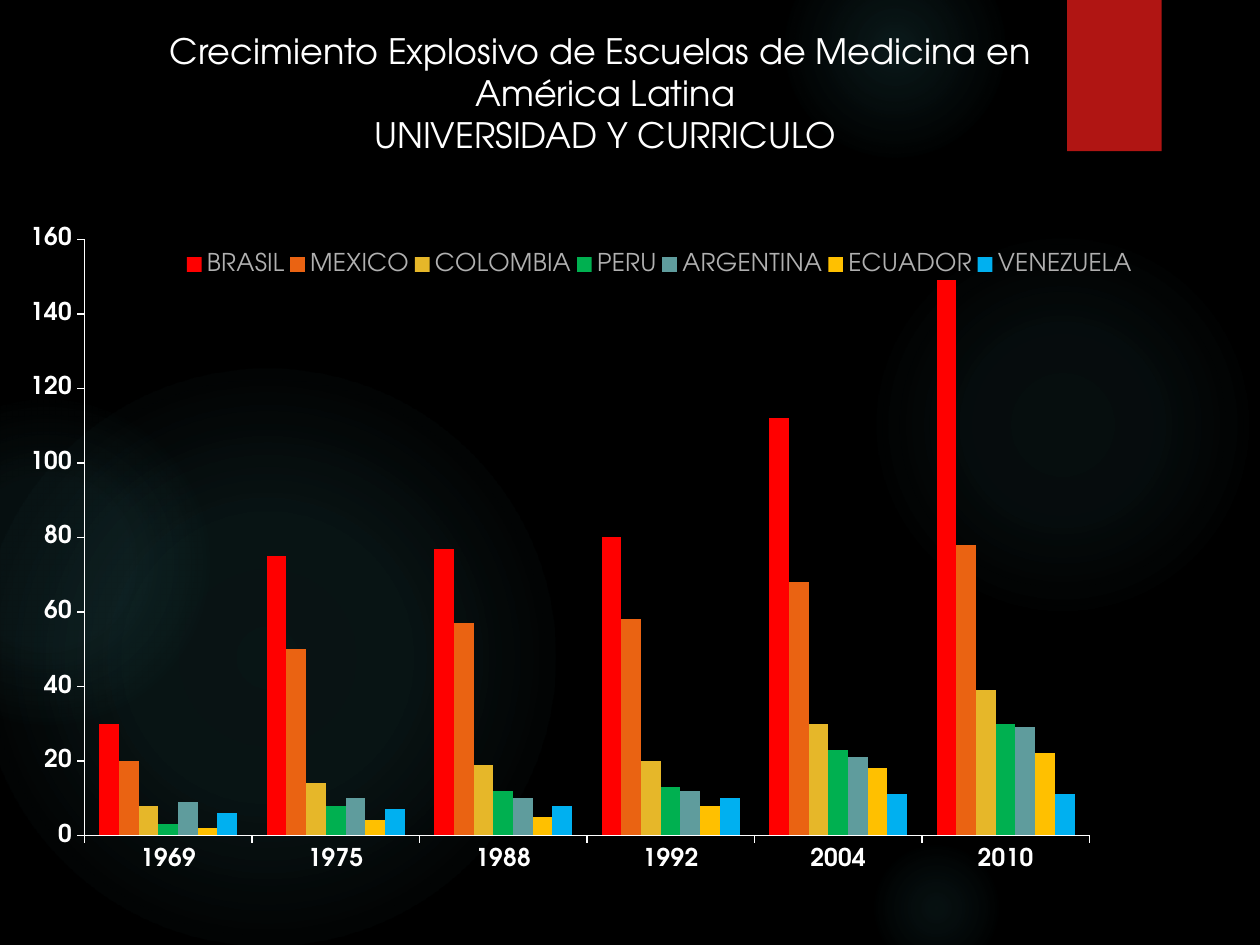
from dataclasses import dataclass

from lxml.etree import SubElement
from pptx import Presentation
from pptx.chart.data import CategoryChartData
from pptx.dml.color import RGBColor
from pptx.enum.chart import XL_CHART_TYPE as ChartType
from pptx.enum.chart import XL_LEGEND_POSITION as LegendPosition
from pptx.enum.chart import XL_TICK_MARK as TickMark
from pptx.enum.shapes import MSO_SHAPE as Shape
from pptx.enum.text import MSO_ANCHOR as Anchor
from pptx.enum.text import PP_ALIGN as Align
from pptx.oxml import parse_xml
from pptx.oxml.ns import nsdecls, qn
from pptx.util import Inches, Pt


@dataclass(frozen=True)
class Theme:
    font: str = "TeX Gyre Adventor"
    background: str = "000000"
    text: str = "FFFFFF"
    muted: str = "B0B0B0"
    accent: str = "B01513"
    glow: str = "50B9C1"
    title_size: int = 20
    label_size: int = 14
    line_width: int = 1


YEARS = ["1969", "1975", "1988", "1992", "2004", "2010"]
SCHOOLS = {
    "BRASIL": ("FF0000", [30, 75, 77, 80, 112, 149]),
    "MEXICO": ("EA6312", [20, 50, 57, 58, 68, 78]),
    "COLOMBIA": ("E6B729", [8, 14, 19, 20, 30, 39]),
    "PERU": ("00B050", [3, 8, 12, 13, 23, 30]),
    "ARGENTINA": ("5F9C9D", [9, 10, 10, 12, 21, 29]),
    "ECUADOR": ("FFC000", [2, 4, 5, 8, 18, 22]),
    "VENEZUELA": ("00B0F0", [6, 7, 8, 10, 11, 11]),
}
# Centre x, centre y and diameter (percent), then (stop, opacity) pairs
GLOWS = [
    (84.3, 44.9, 30.8, [(0, 7), (36, 6), (69, 0)]),
    (71, 5, 17.5, [(0, 14), (36, 7), (73, 0)]),
    (74.3, 96.1, 10.8, [(0, 9), (36, 5), (66, 0)]),
    (21.2, 69.5, 45.8, [(0, 11), (36, 10), (75, 0)]),
    (3.7, 59.5, 25.8, [(0, 8), (36, 8), (72, 0)]),
]
TITLE = ("Crecimiento Explosivo de Escuelas de Medicina en \v"
         "América Latina\vUNIVERSIDAD Y CURRICULO")


def apply(target, values):
    for name, value in values.items():
        setattr(target, name, value)


def set_layout(element, **values):
    """Give a plot area or legend a manual layout in shares of the chart."""
    for old in element.findall(qn("c:layout")):
        element.remove(old)
    layout = parse_xml(f"<c:layout {nsdecls('c')}/>")
    manual = SubElement(layout, qn("c:manualLayout"))
    for name, value in values.items():
        SubElement(manual, qn(f"c:{name}")).set("val", str(value))
    position = element.find(qn("c:legendPos"))
    if position is None:
        element.insert(0, layout)
    else:
        position.addnext(layout)


class SlideBuilder:
    def __init__(self, presentation, theme):
        self.theme = theme
        self.width = presentation.slide_width
        self.height = presentation.slide_height
        self.slide = presentation.slides.add_slide(presentation.slide_layouts[6])
        fill = self.slide.background.fill
        fill.solid()
        fill.fore_color.rgb = RGBColor.from_string(theme.background)

    def box(self, left, top, width, height):
        """Turn percentages of the slide into lengths."""
        return [int(share * side / 100) for share, side in zip(
            (left, top, width, height), (self.width, self.height) * 2)]

    def style_font(self, font, size, color, bold=False):
        apply(font, {"name": self.theme.font, "size": Pt(size), "bold": bold})
        font.color.rgb = RGBColor.from_string(color)

    def shape(self, kind, place, color):
        shape = self.slide.shapes.add_shape(kind, *self.box(*place))
        shape.shadow.inherit = False
        shape.line.fill.background()
        shape.fill.solid()
        shape.fill.fore_color.rgb = RGBColor.from_string(color)
        return shape

    def glow(self, center_x, center_y, diameter, stops):
        tall = diameter * self.width / self.height
        place = (center_x - diameter / 2, center_y - tall / 2, diameter, tall)
        shape = self.shape(Shape.OVAL, place, self.theme.glow)
        stop_xml = "".join(
            f'<a:gs pos="{stop * 1000}"><a:srgbClr val="{self.theme.glow}">'
            f'<a:alpha val="{opacity * 1000}"/></a:srgbClr></a:gs>'
            for stop, opacity in stops)
        gradient = parse_xml(
            f'<a:gradFill {nsdecls("a")}><a:gsLst>{stop_xml}</a:gsLst>'
            '<a:path path="circle"><a:fillToRect l="50000" t="50000" '
            'r="50000" b="50000"/></a:path></a:gradFill>')
        properties = shape.element.spPr
        properties.replace(properties.find(qn("a:solidFill")), gradient)

    def title(self, place, text):
        frame = self.slide.shapes.add_textbox(*self.box(*place)).text_frame
        apply(frame, {"word_wrap": True, "vertical_anchor": Anchor.MIDDLE})
        paragraph = frame.paragraphs[0]
        paragraph.text = text
        paragraph.alignment = Align.CENTER
        for run in paragraph.runs:
            self.style_font(run.font, self.theme.title_size, self.theme.text)

    def style_axis(self, axis):
        apply(axis, {"has_major_gridlines": False,
                     "major_tick_mark": TickMark.OUTSIDE,
                     "minor_tick_mark": TickMark.NONE})
        axis.format.line.width = Pt(self.theme.line_width)
        axis.format.line.color.rgb = RGBColor.from_string(self.theme.text)
        self.style_font(axis.tick_labels.font, self.theme.label_size,
                        self.theme.text, bold=True)

    def column_chart(self, place, categories, table):
        data = CategoryChartData()
        data.categories = categories
        for name, (_, values) in table.items():
            data.add_series(name, values)
        chart = self.slide.shapes.add_chart(
            ChartType.COLUMN_CLUSTERED, *self.box(*place), data).chart
        apply(chart, {"has_title": False, "has_legend": True})
        self.style_font(chart.font, self.theme.label_size, self.theme.muted)

        plot = chart.plots[0]
        apply(plot, {"gap_width": 150, "overlap": 0, "vary_by_categories": False})
        for series, (color, _) in zip(plot.series, table.values()):
            series.format.fill.solid()
            series.format.fill.fore_color.rgb = RGBColor.from_string(color)

        self.style_axis(chart.category_axis)
        self.style_axis(chart.value_axis)
        apply(chart.value_axis, {"minimum_scale": 0, "maximum_scale": 160,
                                 "major_unit": 20})

        legend = chart.legend
        apply(legend, {"position": LegendPosition.RIGHT, "include_in_layout": True})
        self.style_font(legend.font, self.theme.label_size, self.theme.muted)
        set_layout(plot._element.getparent(), layoutTarget="inner", xMode="edge",
                   yMode="edge", x=0.05, y=0.04, w=0.83, h=0.83)
        set_layout(legend._element, xMode="edge", yMode="edge",
                   x=0.13, y=0.05, w=0.79, h=0.05)


def main():
    presentation = Presentation()
    apply(presentation, {"slide_width": Inches(10), "slide_height": Inches(7.5)})
    theme = Theme()
    builder = SlideBuilder(presentation, theme)
    for glow in GLOWS:
        builder.glow(*glow)
    builder.shape(Shape.RECTANGLE, (84.7, 0, 7.5, 16), theme.accent)
    builder.title((9.4, 0.4, 77.3, 18.8), TITLE)
    builder.column_chart((1.9, 22.3, 96.1, 76), YEARS, SCHOOLS)
    presentation.save("out.pptx")


if __name__ == "__main__":
    main()
